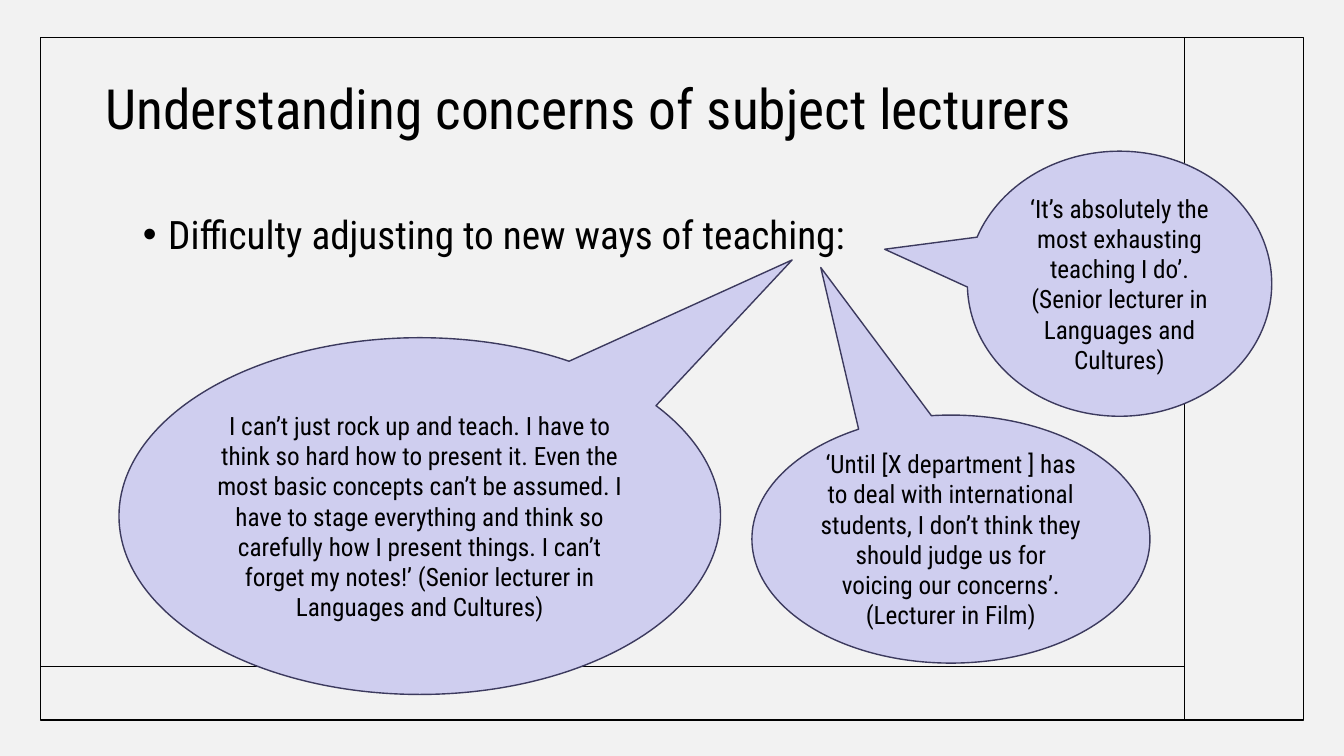
"""Build the slide on the concerns of subject lecturers."""
from lxml import etree
from pptx import Presentation
from pptx import util as u
from pptx.dml.color import RGBColor
from pptx.enum import shapes, text
from pptx.oxml import ns

TITLE = "Understanding concerns of subject lecturers"
CONCERN = "Difficulty adjusting to new ways of teaching:"
QUOTES = [
    {"words": "‘Until [X department ] has to deal with international students, I don’t think "
              "they should judge us for voicing our concerns’. (Lecturer in Film)",
     "box": (18.95, 10.46, 10.03, 6.25), "tip": (-0.327, -1.095)},
    {"words": "‘It’s absolutely the most exhausting teaching I do’. "
              "(Senior lecturer in Languages and Cultures)",
     "box": (24.38, 3.81, 7.67, 6.68), "tip": (-0.772, -0.13)},
    {"words": "I can’t just rock up and teach. I have to think so hard how to present it. "
              "Even the most basic concepts can’t be assumed. I have to stage everything and "
              "think so carefully how I present things. I can’t forget my notes!’ "
              "(Senior lecturer in Languages and Cultures)",
     "box": (3, 8.51, 15.16, 8.99), "tip": (0.619, -0.718)},
]

FONT = "Roboto Condensed"
BLACK = RGBColor(0, 0, 0)
PAPER = RGBColor(0xF2, 0xF2, 0xF2)
LILAC = RGBColor(0xCF, 0xCE, 0xEF)
INDIGO = RGBColor(0x3C, 0x3A, 0x5E)

FRAME = (1.02, 0.94, 31.83, 17.2)
LEFT, TOP, WIDTH, HEIGHT = FRAME
MARGIN_X, FOOTER_Y = 29.85, 16.79
RULES = [(MARGIN_X, TOP, MARGIN_X, TOP + HEIGHT), (LEFT, FOOTER_Y, MARGIN_X, FOOTER_Y)]


def cm(lengths):
    return [u.Cm(length) for length in lengths]


def outline(part, colour):
    part.line.color.rgb = colour
    part.line.width = u.Pt(1)


def write(part, words, size, align, anchor):
    frame = part.text_frame
    frame.text = words
    frame.word_wrap = True
    frame.vertical_anchor = anchor
    paragraph = frame.paragraphs[0]
    paragraph.alignment = align
    font = paragraph.runs[0].font
    font.name, font.size, font.color.rgb = FONT, u.Pt(size), BLACK
    return paragraph


def add_bullet(paragraph):
    properties = paragraph._p.get_or_add_pPr()
    properties.set("marL", str(u.Cm(0.64)))
    properties.set("indent", str(-u.Cm(0.64)))
    etree.SubElement(properties, ns.qn("a:buFont"), typeface="Arial")
    etree.SubElement(properties, ns.qn("a:buChar"), char="•")


def main():
    deck = Presentation()
    deck.slide_width, deck.slide_height = cm((33.87, 19.05))
    slide = deck.slides.add_slide(deck.slide_layouts[6])
    slide.background.fill.solid()
    slide.background.fill.fore_color.rgb = PAPER
    canvas = slide.shapes

    border = canvas.add_shape(shapes.MSO_SHAPE.RECTANGLE, *cm(FRAME))
    border.shadow.inherit = False
    border.fill.background()
    outline(border, BLACK)
    for ends in RULES:
        rule = canvas.add_connector(shapes.MSO_CONNECTOR.STRAIGHT, *cm(ends))
        outline(rule, BLACK)
        etree.SubElement(rule._element.spPr, ns.qn("a:effectLst"))

    heading = canvas.add_textbox(*cm((0.99, 1.14, 27.69, 3.35)))
    line = write(heading, TITLE, 39.6, text.PP_ALIGN.CENTER, text.MSO_ANCHOR.MIDDLE)
    line.line_spacing = 0.9

    concern = canvas.add_textbox(*cm((3.35, 4.83, 26.37, 10.41)))
    line = write(concern, CONCERN, 28, text.PP_ALIGN.LEFT, text.MSO_ANCHOR.TOP)
    line.line_spacing = 1.3
    line.space_before = u.Pt(10)
    add_bullet(line)

    for quote in QUOTES:
        bubble = canvas.add_shape(shapes.MSO_SHAPE.OVAL_CALLOUT, *cm(quote["box"]))
        bubble.adjustments[0], bubble.adjustments[1] = quote["tip"]
        bubble.shadow.inherit = False
        bubble.fill.solid()
        bubble.fill.fore_color.rgb = LILAC
        outline(bubble, INDIGO)
        write(bubble, quote["words"], 18, text.PP_ALIGN.CENTER, text.MSO_ANCHOR.MIDDLE)

    deck.save("out.pptx")


if __name__ == "__main__":
    main()
